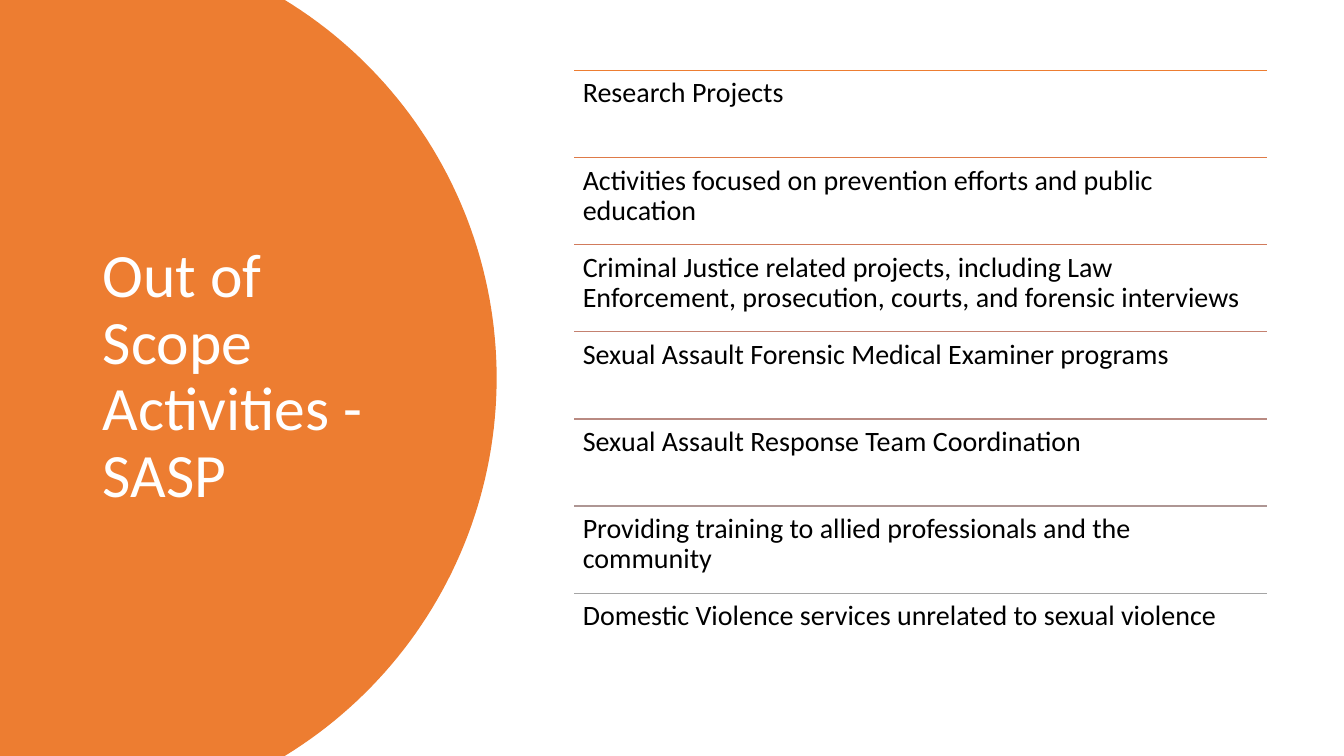
import math
from dataclasses import dataclass

from lxml import etree
from pptx import Presentation
from pptx import util as u
from pptx.dml.color import RGBColor
from pptx.enum import shapes, text
from pptx.oxml.ns import qn

PX = 9525
W, H = 1280, 720
LEFT, TOP, ROW_W, ROW_H = 547, 67, 660, 83


@dataclass(frozen=True)
class Theme:
    font: str = "Calibri"
    accent: str = "ED7D31"
    title: str = "FFFFFF"
    body: str = "000000"
    title_pt: int = 44
    body_pt: int = 20
    rule_pt: int = 1


T = Theme()

ACTIVITIES = [
    ("Research Projects", "ED7D31"),
    ("Activities focused on prevention efforts and public education", "DE7A47"),
    ("Criminal Justice related projects, including Law Enforcement, "
     "prosecution, courts, and forensic interviews", "D17B5C"),
    ("Sexual Assault Forensic Medical Examiner programs", "C48170"),
    ("Sexual Assault Response Team Coordination", "B98A82"),
    ("Providing training to allied professionals and the community", "AE9694"),
    ("Domestic Violence services unrelated to sexual violence", "A5A5A5"),
]


def px(n):
    return u.Emu(n * PX)


def rgb(value):
    return RGBColor.from_string(value)


def add_round_panel(s, cx, radius, steps=90):
    half = math.asin(H / 2 / radius)
    angles = [half * (2 * i / steps - 1) for i in range(steps + 1)]
    arc = [((cx + radius * math.cos(a)) * PX, (H / 2 + radius * math.sin(a)) * PX)
           for a in angles]
    fb = s.shapes.build_freeform(0, 0)
    fb.add_line_segments(arc + [(0, H * PX)], close=True)
    sp = fb.convert_to_shape()
    sp.shadow.inherit = False
    sp.fill.solid()
    sp.fill.fore_color.rgb = rgb(T.accent)
    sp.line.fill.background()


def add_text(s, words, box, size, color, insets, anchor, after=0):
    sp = s.shapes.add_textbox(*map(px, box))
    tf = sp.text_frame
    tf.word_wrap = True
    tf.auto_size = text.MSO_AUTO_SIZE.NONE
    tf.vertical_anchor = anchor
    tf.margin_left = tf.margin_right = px(insets[0])
    tf.margin_top = tf.margin_bottom = px(insets[1])
    p = tf.paragraphs[0]
    p.line_spacing = 0.9
    p.space_after = u.Pt(after)
    r = p.add_run()
    r.text = words
    r.font.name = T.font
    r.font.size = u.Pt(size)
    r.font.color.rgb = rgb(color)


def add_rule(s, x, y, width, color):
    ln = s.shapes.add_connector(shapes.MSO_CONNECTOR.STRAIGHT,
                                px(x), px(y), px(x + width), px(y))
    ln.line.color.rgb = rgb(color)
    ln.line.width = u.Pt(T.rule_pt)
    etree.SubElement(ln._element.spPr, qn("a:effectLst"))


def add_activity(s, y, words, color):
    add_rule(s, LEFT, y, ROW_W, color)
    add_text(s, words, (LEFT, y, ROW_W, ROW_H), T.body_pt, T.body,
             (8, 8), text.MSO_ANCHOR.TOP, after=7)


def main():
    prs = Presentation()
    prs.slide_width, prs.slide_height = px(W), px(H)
    s = prs.slides.add_slide(prs.slide_layouts[6])
    add_round_panel(s, cx=51, radius=422)
    add_text(s, "Out of Scope Activities - SASP", (88, 67, 310, 585),
             T.title_pt, T.title, (10, 5), text.MSO_ANCHOR.MIDDLE)
    for i, (words, color) in enumerate(ACTIVITIES):
        add_activity(s, TOP + i * ROW_H, words, color)
    prs.save("out.pptx")


if __name__ == "__main__":
    main()
